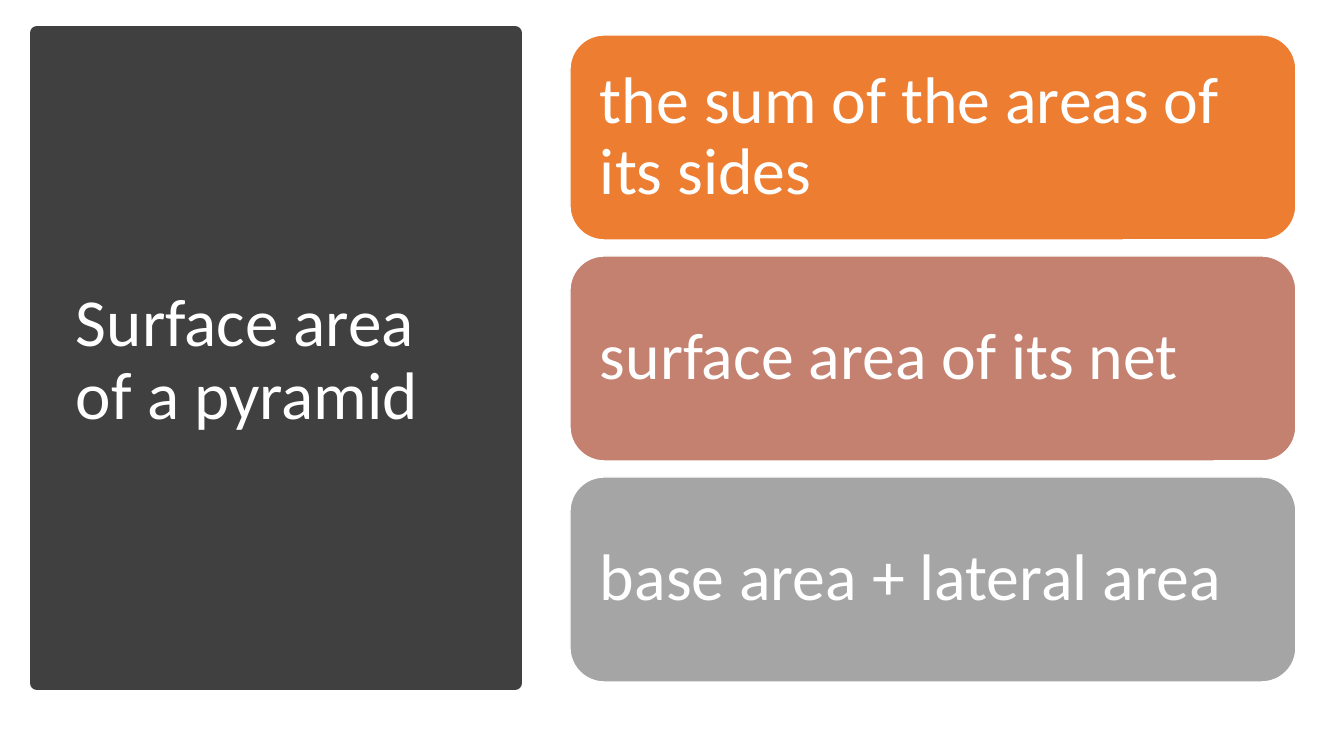
from pptx import Presentation
from pptx.dml.color import RGBColor
from pptx.enum.shapes import MSO_SHAPE
from pptx.enum.text import MSO_ANCHOR, MSO_AUTO_SIZE, PP_ALIGN
from pptx.util import Pt

PX = 914400 / 100.8
WHITE = RGBColor(0xFF, 0xFF, 0xFF)
DARK = RGBColor(0x40, 0x40, 0x40)
ORANGE = RGBColor(0xED, 0x7D, 0x31)
ROSE = RGBColor(0xC4, 0x81, 0x70)
GRAY = RGBColor(0xA5, 0xA5, 0xA5)


def px(*lengths):
    return [round(n * PX) for n in lengths]


def write(tf, text, size, inset_x=10, inset_y=5):
    tf.word_wrap = True
    tf.auto_size = MSO_AUTO_SIZE.NONE
    tf.vertical_anchor = MSO_ANCHOR.MIDDLE
    tf.margin_left, tf.margin_right = px(inset_x, inset_x)
    tf.margin_top, tf.margin_bottom = px(inset_y, inset_y)
    p = tf.paragraphs[0]
    p.alignment = PP_ALIGN.LEFT
    p.line_spacing = 0.9
    r = p.add_run()
    r.text = text
    r.font.size = Pt(size)
    r.font.name = "Calibri"
    r.font.color.rgb = WHITE


prs = Presentation()
prs.slide_width, prs.slide_height = px(1344, 756)
s = prs.slides.add_slide(prs.slide_layouts[5])

# Dark panel, placed behind the title
panel = s.shapes.add_shape(MSO_SHAPE.RECTANGLE, *px(37, 33, 478, 650))
panel.shadow.inherit = False
panel.fill.solid()
panel.fill.fore_color.rgb = DARK
panel.line.color.rgb = DARK
panel.line.width = Pt(10)

title = s.shapes.title
title.left, title.top, title.width, title.height = px(66, 71, 419, 580)
write(title.text_frame, "Surface area of a pyramid", 48)
title.element.addprevious(panel.element)

# Three cards at equal steps
cards = [
    ("the sum of the areas of its sides", ORANGE),
    ("surface area of its net", ROSE),
    ("base area + lateral area", GRAY),
]
CARD_TOP, CARD_STEP = 35, 221
for i, (text, color) in enumerate(cards):
    sp = s.shapes.add_shape(MSO_SHAPE.ROUNDED_RECTANGLE,
                            *px(570, CARD_TOP + i * CARD_STEP, 726, 205))
    sp.shadow.inherit = False
    sp.fill.solid()
    sp.fill.fore_color.rgb = color
    sp.line.color.rgb = WHITE
    sp.line.width = Pt(1)
    write(sp.text_frame, text, 47, inset_x=20, inset_y=20)

prs.save("out.pptx")
